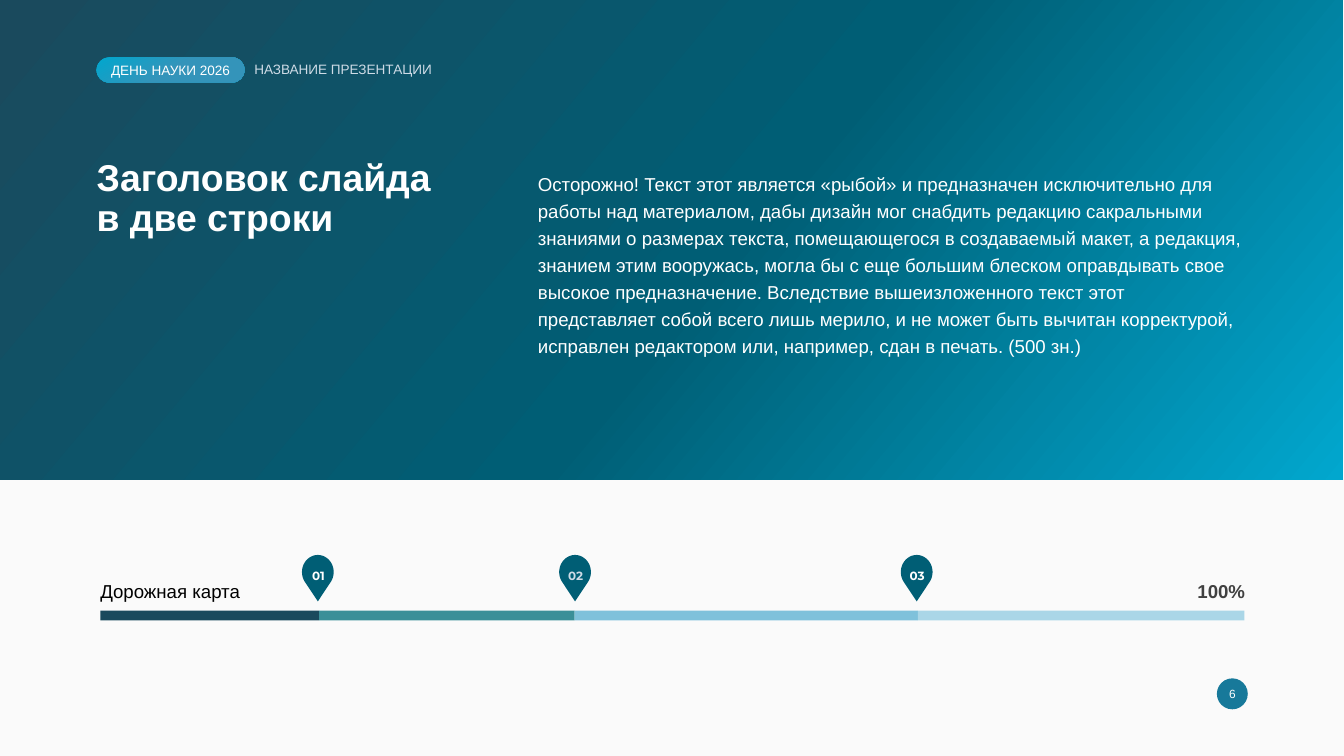
import math
from copy import deepcopy
from pptx import Presentation, util as u
from pptx.dml.color import RGBColor
from pptx.enum import shapes as es, text as et

COLORS = {
    "paper": "FAFAFA", "white": "FFFFFF", "black": "000000", "gray": "404040",
    "pale": "CEDBE6", "navy": "1A4A5D", "petrol": "005E75", "cyan": "01A7CE",
    "blue": "3494BA", "page": "17799A", "green": "3A8F98", "sky": "7FC1DB",
    "ice": "AAD6E7",
}
RGB = {name: RGBColor.from_string(value) for name, value in COLORS.items()}
LEFT, CENTER, RIGHT = et.PP_ALIGN.LEFT, et.PP_ALIGN.CENTER, et.PP_ALIGN.RIGHT

deck = Presentation()
deck.slide_width, deck.slide_height = u.Inches(21.99), u.Inches(12.37)
col, row = deck.slide_width / 100, deck.slide_height / 100
slide = deck.slides.add_slide(deck.slide_layouts[5])
slide.background.fill.solid()
slide.background.fill.fore_color.rgb = RGB["paper"]
canvas = slide.shapes


def area(left, top, width, height):
    return [round(v) for v in (left * col, top * row, width * col, height * row)]


def write(holder, words, size, color, align=LEFT, bold=False, spacing=1.0,
          inset=0.0, font="Arial", anchor=et.MSO_ANCHOR.TOP, grow=False):
    frame = holder.text_frame
    frame.text = words
    frame.word_wrap = True
    frame.vertical_anchor = anchor
    frame.auto_size = et.MSO_AUTO_SIZE.SHAPE_TO_FIT_TEXT if grow else et.MSO_AUTO_SIZE.NONE
    frame.margin_left = frame.margin_right = u.Inches(inset)
    frame.margin_top = frame.margin_bottom = u.Inches(inset)
    paragraph = frame.paragraphs[0]
    paragraph.alignment, paragraph.line_spacing = align, spacing
    for run in paragraph.runs:
        run.font.name, run.font.size, run.font.bold = font, u.Pt(size), bold
        run.font.color.rgb = RGB[color]


gradients = [
    (es.MSO_SHAPE.RECTANGLE, (0, 0, 99.91, 63.46), 40,
     [(0.01, "navy"), (0.54, "petrol"), (1, "cyan")]),
    (es.MSO_SHAPE.ROUNDED_RECTANGLE, (7.19, 7.6, 11, 3.31), 60,
     [(0, "cyan"), (0.51, "blue")]),
]
for kind, place, angle, stops in gradients:
    badge = canvas.add_shape(kind, *area(*place))
    badge.shadow.inherit = False
    badge.line.fill.background()
    badge.fill.gradient()
    badge.fill.gradient_angle = 360 - angle
    stop_list = badge.element.xpath(".//a:gsLst")[0]
    for extra in stops[2:]:
        stop_list.append(deepcopy(stop_list[0]))
    for stop, (position, color) in zip(badge.fill.gradient_stops, stops):
        stop.position = position
        stop.color.rgb = RGB[color]
badge.adjustments[0] = 0.5
write(badge, "ДЕНЬ НАУКИ 2026", 16, "white", CENTER, inset=0.05, anchor=et.MSO_ANCHOR.MIDDLE)

heading = canvas.title
canvas.element.append(heading.element)
heading.left, heading.top, heading.width, heading.height = area(7.19, 21.02, 67.85, 5.42)
write(heading, "Заголовок слайда\vв две строки", 44, "white", bold=True, spacing=0.9, grow=True)

section = canvas.add_textbox(*area(18.92, 8.33, 16.28, 1.94))
write(section, "НАЗВАНИЕ ПРЕЗЕНТАЦИИ", 16, "pale", spacing=0.9)

story = canvas.add_textbox(*area(39.75, 21.83, 53.07, 25.71))
write(story, "Осторожно! Текст этот является «рыбой» и предназначен исключительно для "
      "работы над материалом, дабы дизайн мог снабдить редакцию сакральными знаниями "
      "о размерах текста, помещающегося в создаваемый макет, а редакция, знанием этим "
      "вооружась, могла бы с еще большим блеском оправдывать свое высокое "
      "предназначение. Вследствие вышеизложенного текст этот представляет собой всего "
      "лишь мерило, и не может быть вычитан корректурой, исправлен редактором или, "
      "например, сдан в печать. (500 зн.)", 22, "white", spacing=1.2, inset=0.06, grow=True)

bounds = [7.46, 23.74, 42.75, 68.3, 92.59]
for start, end, color in zip(bounds, bounds[1:], ["navy", "green", "sky", "ice"]):
    stage = canvas.add_shape(es.MSO_SHAPE.RECTANGLE, *area(start, 80.76, end - start, 1.29))
    stage.shadow.inherit = False
    stage.line.fill.background()
    stage.fill.solid()
    stage.fill.fore_color.rgb = RGB[color]

roadmap = canvas.add_textbox(*area(7.19, 75.67, 23.37, 4.2))
write(roadmap, "Дорожная карта", 22, "black", spacing=1.2, inset=0.06, grow=True)
total = canvas.add_textbox(*area(87.09, 75.67, 5.82, 4.2))
write(total, "100%", 22, "gray", RIGHT, True, 1.2, 0.06, grow=True)

milestones = [("01", 23.65, "white"), ("02", 42.79, "pale"), ("03", 68.21, "white")]
for number, center, color in milestones:
    outline = [(round((center + 1.18 * math.cos(math.radians(a))) * col),
                round((75.67 + 2.26 * math.sin(math.radians(a))) * row))
               for a in range(145, 396, 5)]
    builder = canvas.build_freeform(round(center * col), round(79.55 * row))
    builder.add_line_segments(outline, close=True)
    pin = builder.convert_to_shape()
    pin.shadow.inherit = False
    pin.line.fill.background()
    pin.fill.solid()
    pin.fill.fore_color.rgb = RGB["petrol"]
    label = canvas.add_textbox(*area(center - 1.14, 74.37, 2.36, 3.07))
    write(label, number, 14, color, CENTER, True, 1.2, 0.06, "Montserrat", grow=True)

page = canvas.add_shape(es.MSO_SHAPE.OVAL, *area(90.54, 89.73, 2.3, 4.1))
page.shadow.inherit = False
page.line.fill.background()
page.fill.solid()
page.fill.fore_color.rgb = RGB["page"]
write(page, "6", 14, "white", CENTER, anchor=et.MSO_ANCHOR.MIDDLE)

deck.save("out.pptx")
